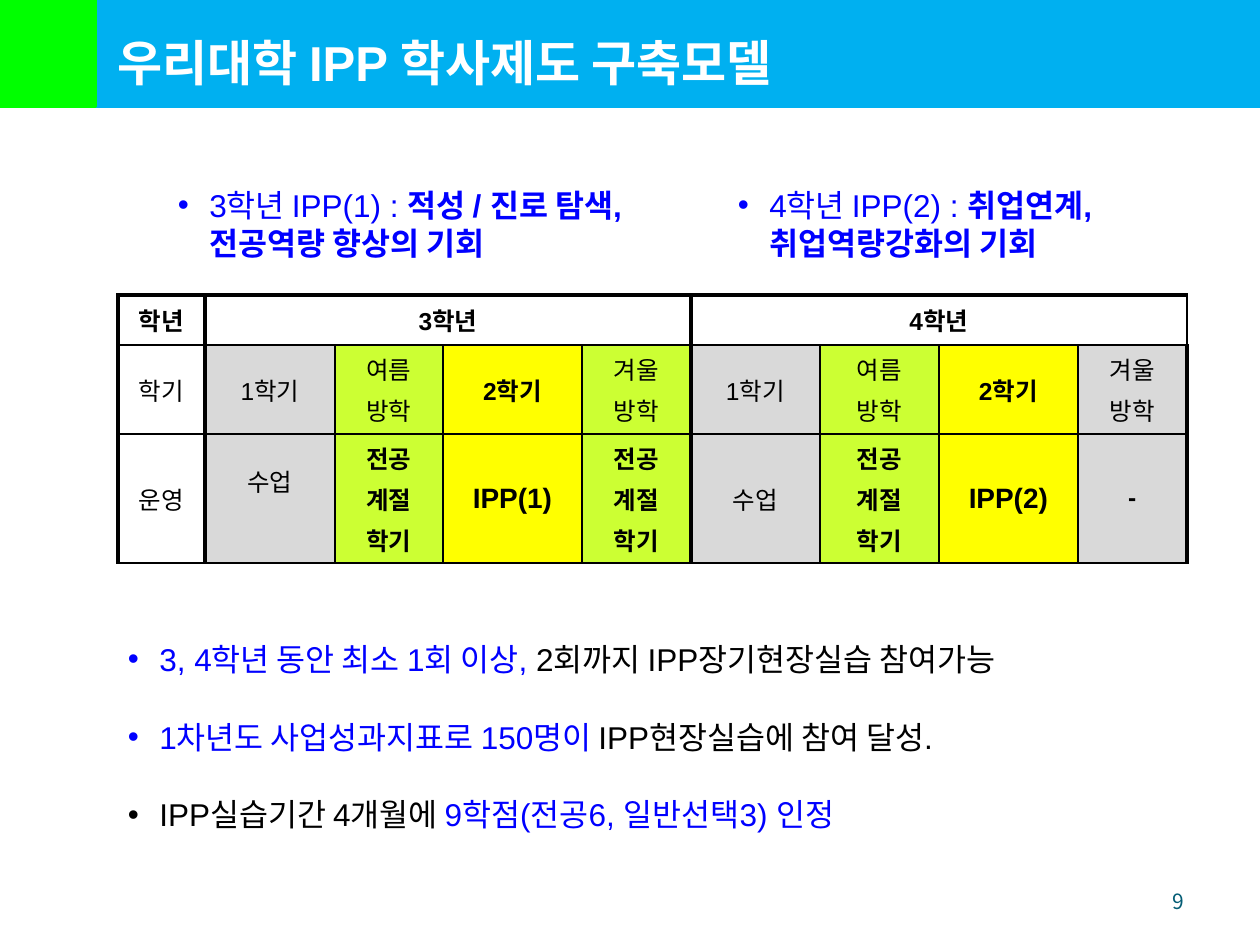
from pptx import Presentation, util as u
from pptx.dml.color import RGBColor
from pptx.enum import shapes, text
from pptx.oxml import parse_xml
from pptx.oxml.ns import nsdecls

PX = 914400 / 126
C = dict(sky="00B0F0", green="00FF00", blue="0000FF", black="000000", white="FFFFFF",
         gray="D9D9D9", lime="CCFF33", yellow="FFFF00", teal="045D75")


def style(r, size, color, bold=False, font="Arial"):
    f = r.font
    f.size, f.bold, f.name = u.Pt(size), bold, font
    f.color.rgb = RGBColor.from_string(C[color])


def textbox(box, margins, paras, spacing=None, bullet=False):
    """Each paragraph is a list of (text, size, color, bold, font) runs."""
    tf = s.shapes.add_textbox(*[u.Emu(round(v * PX)) for v in box]).text_frame
    tf.word_wrap = True
    tf.margin_left, tf.margin_top, tf.margin_right, tf.margin_bottom = [
        u.Emu(round(v * PX)) for v in margins]
    for i, runs in enumerate(paras):
        p = tf.paragraphs[0] if i == 0 else tf.add_paragraph()
        if spacing:
            p.line_spacing = spacing
        if bullet:
            p.space_after = u.Pt(12)
            pPr = p._p.get_or_add_pPr()
            pPr.set("marL", str(u.Inches(0.25)))
            pPr.set("indent", str(-u.Inches(0.25)))
            pPr.append(parse_xml(f'<a:buFont {nsdecls("a")} typeface="Arial"/>'))
            pPr.append(parse_xml(f'<a:buChar {nsdecls("a")} char="•"/>'))
        for words, *look in runs:
            r = p.add_run()
            r.text = words
            style(r, *look)
    return tf


prs = Presentation()
prs.slide_width, prs.slide_height = u.Inches(10), u.Inches(7.5)
s = prs.slides.add_slide(prs.slide_layouts[6])

# Closing points
textbox((44, 561, 1121, 286), (84, 60, 84, 20), [
    [("3, 4학년 동안 최소 1회 이상, ", 18, "blue"), ("2회까지 IPP장기현장실습 참여가능", 18, "black")],
    [("1차년도 사업성과지표로 150명이 ", 18, "blue"), ("IPP현장실습에 참여 달성.", 18, "black")],
    [("IPP실습기간 4개월에 ", 18, "black"), ("9학점(전공6, 일반선택3) 인정", 18, "blue")],
], spacing=1.5, bullet=True)

# Curriculum table: (text, fill, bold, size)
ROWS = [
    [("학년", "white", True, 14), ("3학년", "white", True, 14), None, None, None,
     ("4학년", "white", True, 14), None, None, None],
    [("학기", "white", False, 14)] + [
        cell for last in ("lime", "gray") for cell in (
            ("1학기", "gray", False, 14), ("여름\n방학", "lime", False, 14),
            ("2학기", "yellow", True, 14), ("겨울\n방학", last, False, 14))],
    [("운영", "white", False, 14)] + [
        cell for n, last in ((1, ("전공\n계절\n학기", "lime", True, 14)), (2, ("-", "gray", True, 14)))
        for cell in (("수업", "gray", False, 14), ("전공\n계절\n학기", "lime", True, 14),
                     (f"IPP({n})", "yellow", True, 16), last)],
]
WIDTHS = [87, 130, 108, 139, 109, 129, 119, 139, 109]
HEIGHTS = [50, 89, 129]
tbl = s.shapes.add_table(3, 9, *[u.Emu(round(v * PX)) for v in
                                 (118, 295, sum(WIDTHS), sum(HEIGHTS))]).table
tbl.first_row = tbl.horz_banding = False
for col, w in zip(tbl.columns, WIDTHS):
    col.width = u.Emu(round(w * PX))
for row, h in zip(tbl.rows, HEIGHTS):
    row.height = u.Emu(round(h * PX))
for first in (1, 5):
    tbl.cell(0, first).merge(tbl.cell(0, first + 3))

for i, row in enumerate(ROWS):
    for j, content in enumerate(row):
        cell = tbl.cell(i, j)
        # Heavy rules frame the table and part the school years
        heavy = {"L": j in (0, 1, 5), "R": j in (0, 4, 8), "T": i == 0, "B": False}
        tcPr = cell._tc.get_or_add_tcPr()
        for side, thick in heavy.items():
            tcPr.append(parse_xml(
                f'<a:ln{side} {nsdecls("a")} w="{u.Pt(2.25 if thick else 1)}"><a:solidFill>'
                f'<a:srgbClr val="{C["black"]}"/></a:solidFill></a:ln{side}>'))
        words, fill, bold, size = content or ("", "white", True, 14)
        cell.fill.solid()
        cell.fill.fore_color.rgb = RGBColor.from_string(C[fill])
        cell.vertical_anchor = text.MSO_ANCHOR.MIDDLE
        if content:
            cell.text_frame.text = words
            for p in cell.text_frame.paragraphs:
                p.alignment = text.PP_ALIGN.CENTER
                p.space_before = u.Pt(size * 0.2)
                style(p.runs[0], size, "black", bold)
tbl.cell(2, 1).margin_bottom = u.Emu(round(42 * PX))  # this label sits higher

# Page number
tf = textbox((903, 876, 294, 50), (13, 6, 13, 6), [[("9", 12, "teal", False, "Noto Sans CJK KR")]])
tf.vertical_anchor = text.MSO_ANCHOR.MIDDLE
tf.paragraphs[0].alignment = text.PP_ALIGN.RIGHT

# Header band
for width, color in ((1260, "sky"), (95, "green")):
    sp = s.shapes.add_shape(shapes.MSO_SHAPE.RECTANGLE, 0, 0,
                            u.Emu(round(width * PX)), u.Emu(round(106 * PX)))
    sp.shadow.inherit = False
    sp.fill.solid()
    sp.fill.fore_color.rgb = sp.line.color.rgb = RGBColor.from_string(C[color])
    sp.line.width = u.Pt(2)
textbox((105, 26, 794, 72), (13, 6, 13, 6), [[("우리대학 IPP 학사제도 구축모델", 28, "white", True)]])

# Aim of each school year
for left, width, lead, aim in (
        (178, 493, "3학년 IPP(1) : ", "적성 / 진로 탐색, 전공역량 향상의 기회"),
        (738, 403, "4학년 IPP(2) : ", "취업연계, 취업역량강화의 기회")):
    textbox((left, 186, width, 108), (0, 0, 0, 0),
            [[(lead, 18, "blue"), (aim, 18, "blue", True)]], bullet=True)

prs.save("out.pptx")
